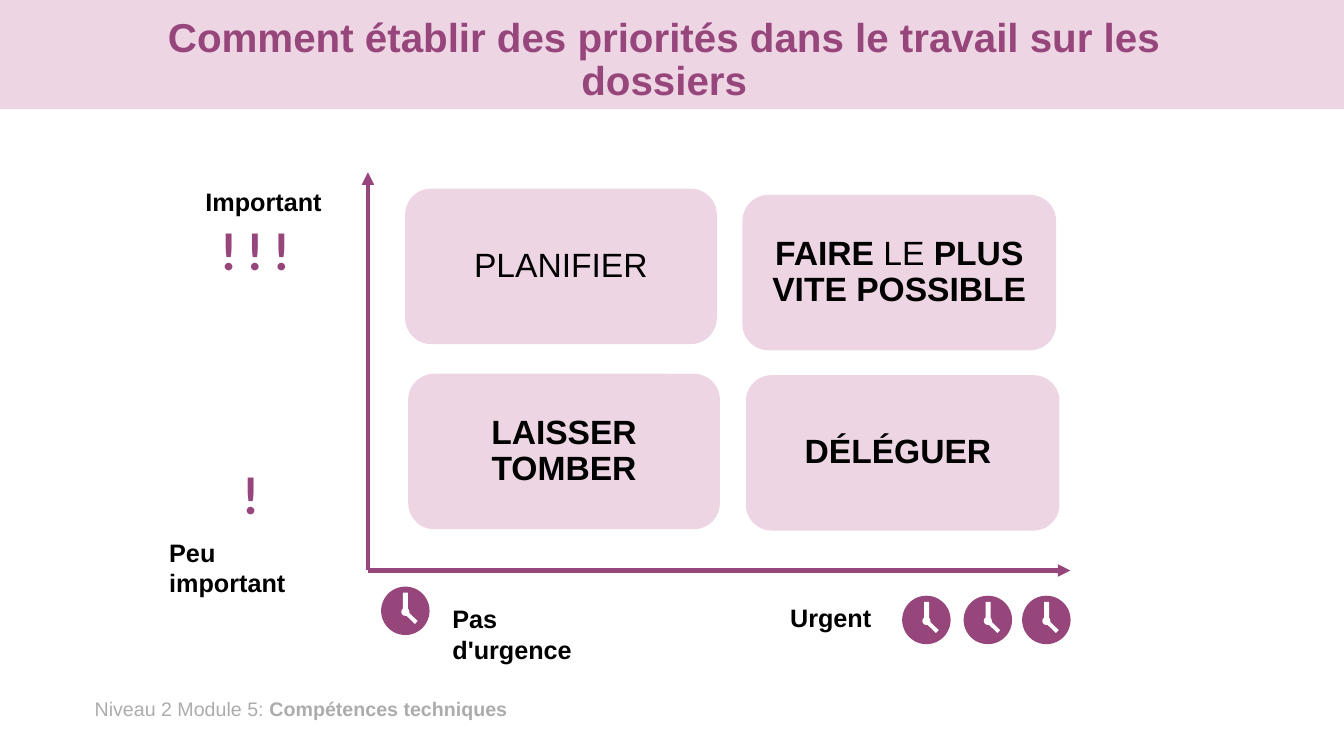
"""Build the slide on setting priorities by importance and urgency."""
from dataclasses import dataclass

from lxml import etree
from pptx import Presentation
from pptx.dml.color import RGBColor
from pptx.enum.shapes import MSO_CONNECTOR, MSO_SHAPE
from pptx.enum.text import MSO_ANCHOR, MSO_AUTO_SIZE, PP_ALIGN
from pptx.oxml.ns import qn
from pptx.util import Pt

RECTANGLE, ROUNDED, OVAL = MSO_SHAPE.RECTANGLE, MSO_SHAPE.ROUNDED_RECTANGLE, MSO_SHAPE.OVAL
STRAIGHT = MSO_CONNECTOR.STRAIGHT
MIDDLE, CENTER, LEFT = MSO_ANCHOR.MIDDLE, PP_ALIGN.CENTER, PP_ALIGN.LEFT
NO_FIT, GROW = MSO_AUTO_SIZE.NONE, MSO_AUTO_SIZE.SHAPE_TO_FIT_TEXT
TITLE_ONLY = 5


@dataclass(frozen=True)
class Theme:
    """Colours, fonts and type sizes in points."""
    plum: RGBColor = RGBColor(0x97, 0x46, 0x7C)
    pink: RGBColor = RGBColor(0xED, 0xD5, 0xE4)
    black: RGBColor = RGBColor(0, 0, 0)
    white: RGBColor = RGBColor(255, 255, 255)
    grey: RGBColor = RGBColor(0xAE, 0xAB, 0xAB)
    text_font: str = "Arial"
    mark_font: str = "Lato"
    title_size: float = 28.8
    box_size: float = 24
    label_size: float = 18
    mark_size: float = 36
    footer_size: float = 14


THEME = Theme()
SLIDE_SIZE = (960, 540)
BAND = (0, 0, 960, 77.8)

TITLE = [("Comment établir des priorités dans le travail sur les dossiers", True)]
TITLE_BOX = (60.5, 9.4, 828, 68.4)
FOOTER = [("Niveau 2 Module 5: ", False), ("Compétences techniques", True)]
FOOTER_BOX = (60.5, 494.6, 327.6, 24.5)

QUADRANTS = [
    ((289.4, 134.8, 222.6, 111), [("PLANIFIER", False)]),
    ((530.4, 139.2, 224, 111),
     [("FAIRE ", True), ("LE ", False), ("PLUS VITE POSSIBLE", True)]),
    ((291.6, 267, 222.6, 111), [("LAISSER TOMBER", True)]),
    ((532.8, 268, 224, 111), [("DÉLÉGUER ", True)]),
]
LABELS = [
    ("Important", (139.7, 129.6, 99, 29)),
    ("Peu important", (113.8, 380.2, 133.9, 29)),
    ("Pas d'urgence", (316.1, 427.7, 106.6, 29)),
    ("Urgent", (557.3, 427, 74, 29)),
]
MARKS = [
    ("! ! !", (151.2, 153.4, 75.6, 51)),
    ("!", (167, 327.6, 27.4, 51)),
]

ORIGIN = (262.8, 407.5)
AXIS_ENDS = [(262.8, 123.1), (764.6, 407.5)]
AXIS_WIDTH = 3

CLOCKS = [(272.2, 419), (644.4, 425.5), (688.3, 425.5), (730.1, 425.5)]
CLOCK_PARTS = [
    (OVAL, (0, 0, 34.6, 34.6), 0, THEME.plum),
    (OVAL, (14.4, 15.1, 5.8, 5.8), 0, THEME.white),
    (RECTANGLE, (10.6, 9.4, 13.7, 3.6), 270, THEME.white),
    (RECTANGLE, (17.1, 20.9, 9.4, 2.9), 224.2, THEME.white),
]


def points(values):
    return [Pt(value) for value in values]


def write(shape, runs, size, color, font=THEME.text_font, align=LEFT, spacing=1.0):
    paragraph = shape.text_frame.paragraphs[0]
    paragraph.alignment = align
    paragraph.line_spacing = spacing
    for text, bold in runs:
        run = paragraph.add_run()
        run.text = text
        run.font.name = font
        run.font.size = Pt(size)
        run.font.bold = bold
        run.font.color.rgb = color


def set_frame(shape, fit, horizontal=7.2, vertical=3.6):
    frame = shape.text_frame
    frame.word_wrap = True
    frame.auto_size = fit
    frame.margin_left = frame.margin_right = Pt(horizontal)
    frame.margin_top = frame.margin_bottom = Pt(vertical)
    return frame


def add_filled(shapes, kind, box, color):
    shape = shapes.add_shape(kind, *points(box))
    shape.shadow.inherit = False
    shape.fill.solid()
    shape.fill.fore_color.rgb = color
    shape.line.fill.background()
    return shape


def add_text(slide, box, runs, size, color, font=THEME.text_font):
    shape = slide.shapes.add_textbox(*points(box))
    set_frame(shape, GROW)
    write(shape, runs, size, color, font)


def add_title(slide):
    title = slide.shapes.title
    title.left, title.top, title.width, title.height = points(TITLE_BOX)
    set_frame(title, NO_FIT).vertical_anchor = MIDDLE
    write(title, TITLE, THEME.title_size, THEME.plum, align=CENTER, spacing=0.9)
    band = add_filled(slide.shapes, RECTANGLE, BAND, THEME.pink)
    title._element.addprevious(band._element)


def add_quadrant(slide, box, runs):
    shape = add_filled(slide.shapes, ROUNDED, box, THEME.pink)
    shape.adjustments[0] = 0.167
    set_frame(shape, NO_FIT, 12, 9).vertical_anchor = MIDDLE
    write(shape, runs, THEME.box_size, THEME.black, align=CENTER, spacing=0.9)


def add_clock(slide, left, top):
    group = slide.shapes.add_group_shape()
    for kind, (x, y, width, height), rotation, color in CLOCK_PARTS:
        part = add_filled(group.shapes, kind, (left + x, top + y, width, height), color)
        part.rotation = rotation


def add_axis(slide, end):
    axis = slide.shapes.add_connector(STRAIGHT, *points(ORIGIN + end))
    axis.line.color.rgb = THEME.plum
    axis.line.width = Pt(AXIS_WIDTH)
    etree.SubElement(axis.line._get_or_add_ln(), qn("a:tailEnd"), type="triangle")
    etree.SubElement(axis._element.spPr, qn("a:effectLst"))


def main():
    presentation = Presentation()
    presentation.slide_width, presentation.slide_height = points(SLIDE_SIZE)
    slide = presentation.slides.add_slide(presentation.slide_layouts[TITLE_ONLY])
    add_title(slide)
    add_text(slide, FOOTER_BOX, FOOTER, THEME.footer_size, THEME.grey)
    for text, box in LABELS:
        add_text(slide, box, [(text, True)], THEME.label_size, THEME.black)
    for box, runs in QUADRANTS:
        add_quadrant(slide, box, runs)
    for text, box in MARKS:
        add_text(slide, box, [(text, True)], THEME.mark_size, THEME.plum, THEME.mark_font)
    for left, top in CLOCKS:
        add_clock(slide, left, top)
    for end in AXIS_ENDS:
        add_axis(slide, end)
    presentation.save("out.pptx")


if __name__ == "__main__":
    main()
